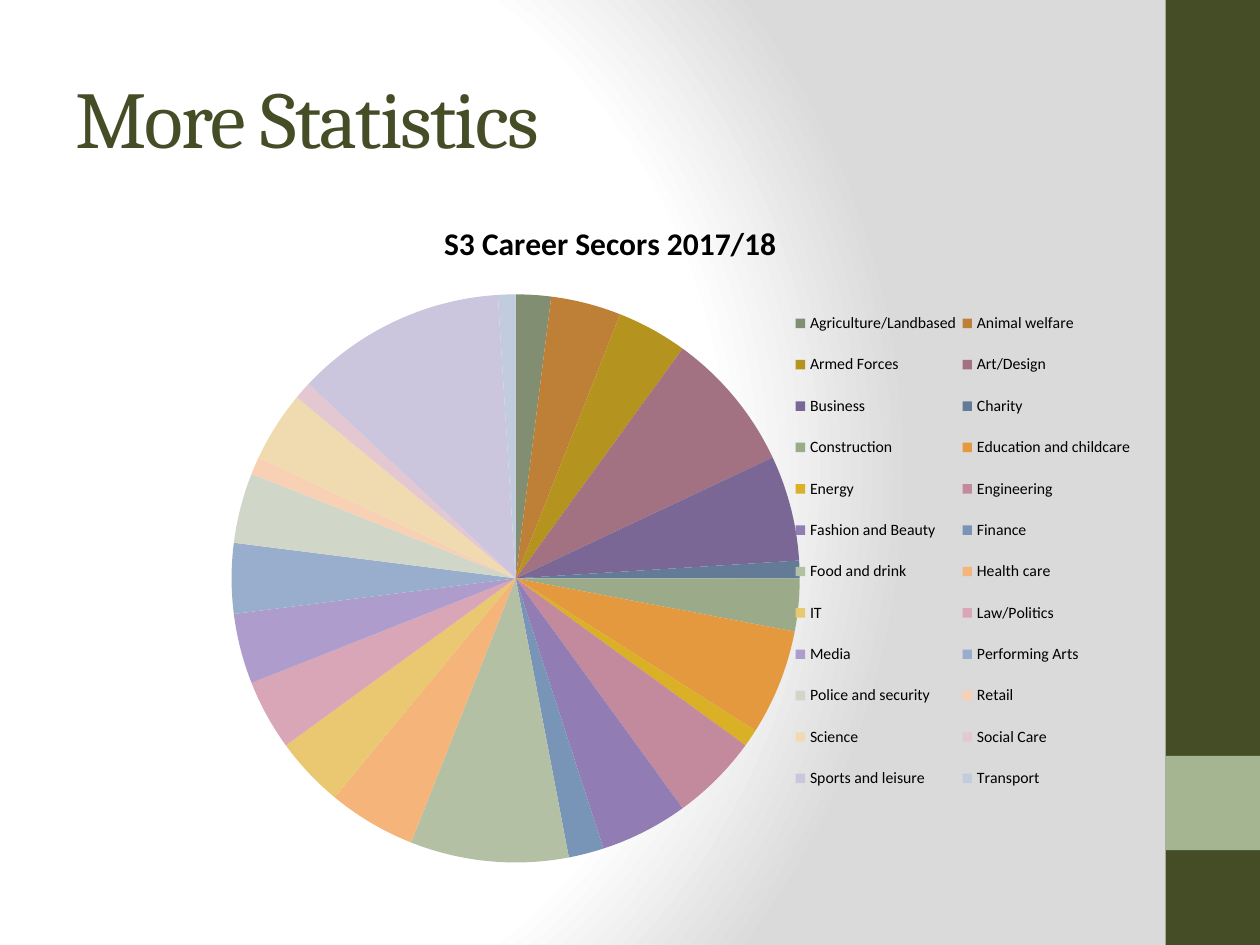
from lxml import etree
from pptx import Presentation
from pptx.chart.data import CategoryChartData
from pptx.dml.color import RGBColor
from pptx.enum.chart import XL_CHART_TYPE as ChartType, XL_LEGEND_POSITION as LegendPosition
from pptx.enum.shapes import MSO_SHAPE as Shape
from pptx.enum.text import MSO_ANCHOR as Anchor
from pptx.oxml import parse_xml
from pptx.oxml.ns import nsdecls, qn
from pptx.util import Cm, Pt

COLORS = {"dark": "444D26", "green": "A5B592", "white": "FFFFFF", "gray": "DADADA", "black": "000000"}

# Four shades of the six accent colours, from dark to pale
SLICE_SHADES = [
    "818E72", "BE8037", "B4931F", "A37282", "7A6796", "647B98",
    "9BAA89", "E4993F", "D9B026", "C3899C", "927CB4", "7894B6",
    "B3C0A4", "F5B47A", "EAC771", "D8A6B6", "AE9CCC", "99AECC",
    "D0D7C8", "F8D0B4", "F0DBB0", "E4C8D1", "CCC5DE", "C1CCDF",
]

SECTORS = [
    ("Agriculture/Landbased", 2), ("Animal welfare", 4), ("Armed Forces", 4),
    ("Art/Design", 8), ("Business", 6), ("Charity", 1),
    ("Construction", 3), ("Education and childcare", 6), ("Energy", 1),
    ("Engineering", 5), ("Fashion and Beauty", 5), ("Finance", 2),
    ("Food and drink", 9), ("Health care", 5), ("IT", 4),
    ("Law/Politics", 4), ("Media", 4), ("Performing Arts", 4),
    ("Police and security", 4), ("Retail", 1), ("Science", 4),
    ("Social Care", 1), ("Sports and leisure", 12), ("Transport", 1),
]


def insert_layout(parent, index, x, y, w, h, inner=False):
    """Place a chart part by fractions of the chart area."""
    for old in parent.findall(qn("c:layout")):
        parent.remove(old)
    layout = etree.Element(qn("c:layout"))
    manual = etree.SubElement(layout, qn("c:manualLayout"))
    settings = [("layoutTarget", "inner")] if inner else []
    settings += [("xMode", "edge"), ("yMode", "edge"), ("x", x), ("y", y), ("w", w), ("h", h)]
    for name, value in settings:
        etree.SubElement(manual, qn(f"c:{name}")).set("val", str(value))
    parent.insert(index, layout)


presentation = Presentation()
presentation.slide_width = Cm(25.4)
presentation.slide_height = Cm(19.05)
slide = presentation.slides.add_slide(presentation.slide_layouts[6])

# Background: white circle fading to gray
background_fill = slide.background.fill
background_fill.solid()
solid = next(slide.element.iter(qn("a:solidFill")))
stops = "".join(
    f'<a:gs pos="{position * 1000}"><a:srgbClr val="{COLORS[name]}"/></a:gs>'
    for position, name in [(0, "white"), (75, "white"), (100, "gray")]
)
solid.getparent().replace(solid, parse_xml(
    f'<a:gradFill {nsdecls("a")} rotWithShape="1"><a:gsLst>{stops}</a:gsLst>'
    '<a:path path="circle"><a:fillToRect l="20000" t="50000" r="100000" b="50000"/></a:path>'
    '</a:gradFill>'
))

# Side bar with accent block
for top, height, color in [(0, 19.05, "dark"), (15.24, 1.9, "green")]:
    shape = slide.shapes.add_shape(Shape.RECTANGLE, Cm(23.5), Cm(top), Cm(1.9), Cm(height))
    shape.shadow.inherit = False
    shape.fill.solid()
    shape.fill.fore_color.rgb = RGBColor.from_string(COLORS[color])
    shape.line.fill.background()

# Title
title_box = slide.shapes.add_textbox(Cm(1.27), Cm(0.76), Cm(21.16), Cm(3.18))
title_box.text_frame.word_wrap = True
title_box.text_frame.vertical_anchor = Anchor.MIDDLE
paragraph = title_box.text_frame.paragraphs[0]
run = paragraph.add_run()
run.text = "More Statistics"
paragraph.font.name = "Cambria"
paragraph.font.size = Pt(46)
paragraph.font.color.rgb = RGBColor.from_string(COLORS["dark"])
run.font._element.set("spc", "-100")

# Pie chart
chart_data = CategoryChartData()
chart_data.categories = [name for name, _ in SECTORS]
chart_data.add_series("Series 1", [value for _, value in SECTORS])
chart = slide.shapes.add_chart(
    ChartType.PIE, Cm(1.7), Cm(3.94), Cm(21.21), Cm(13.79), chart_data
).chart
chart.font.name = "Calibri"
chart.font.size = Pt(10)
chart.font.color.rgb = RGBColor.from_string(COLORS["black"])

chart.has_title = True
chart.chart_title.include_in_layout = False
chart.chart_title.text_frame.text = "S3 Career Secors 2017/18"
chart_title_font = chart.chart_title.text_frame.paragraphs[0].font
chart_title_font.name = "Calibri"
chart_title_font.size = Pt(18)
chart_title_font.bold = True
chart_title_font.color.rgb = RGBColor.from_string(COLORS["black"])

plot = chart.plots[0]
plot.vary_by_categories = True
for index, color in enumerate(SLICE_SHADES):
    slice_format = plot.series[0].points[index].format
    slice_format.fill.solid()
    slice_format.fill.fore_color.rgb = RGBColor.from_string(color)
    slice_format.line.fill.background()

chart.has_legend = True
legend = chart.legend
legend.position = LegendPosition.RIGHT
legend.include_in_layout = False
legend.font.name = "Calibri"
legend.font.size = Pt(9)
legend.font.color.rgb = RGBColor.from_string(COLORS["black"])

plot_area = next(chart.element.iter(qn("c:plotArea"))) if hasattr(chart, "element") else chart._chartSpace.chart.plotArea
insert_layout(plot_area, 0, 0.14, 0.14, 0.54, 0.84, inner=True)
insert_layout(legend._element, 1, 0.67, 0.14, 0.33, 0.76)

presentation.save("out.pptx")
